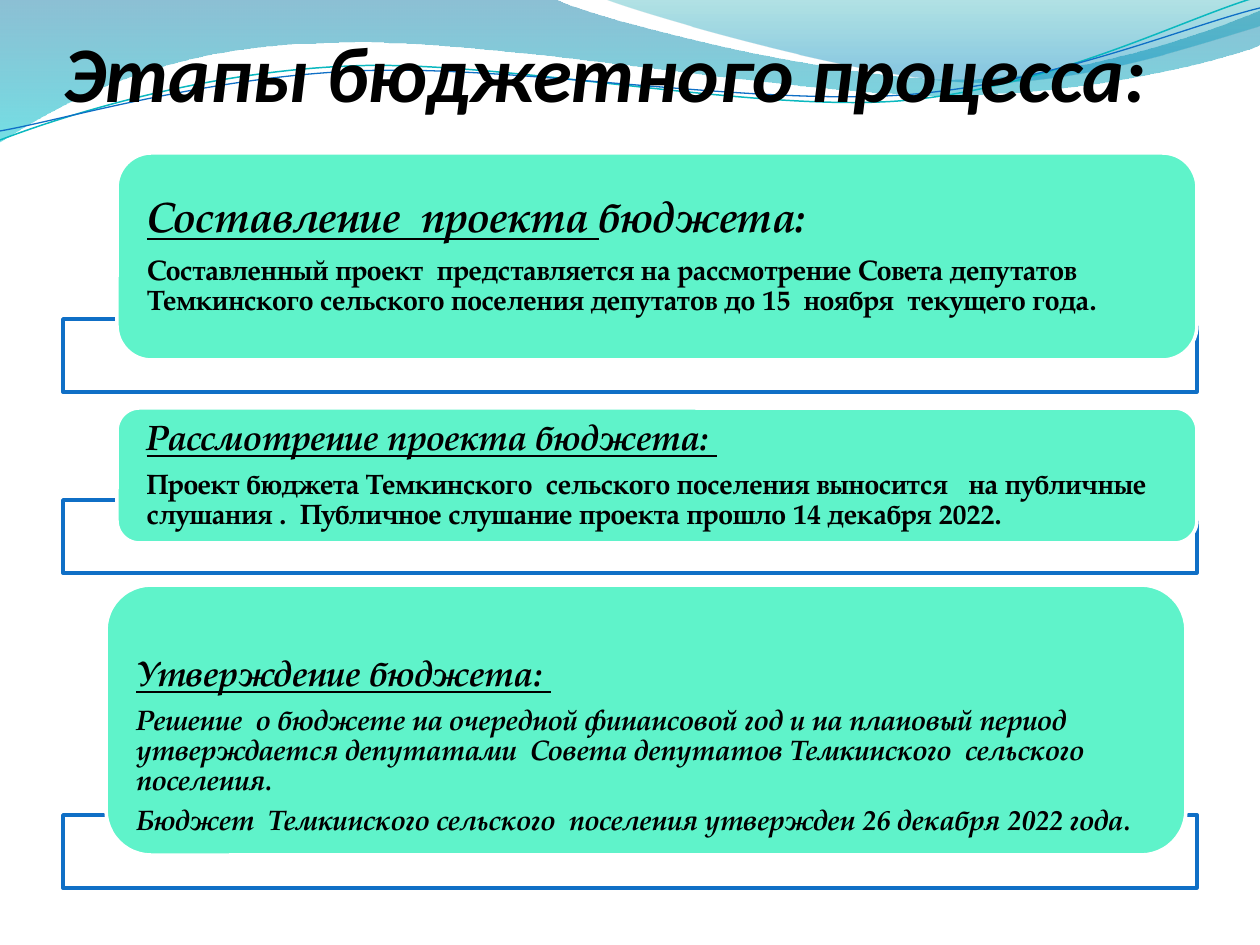
from lxml import etree
from pptx import Presentation
from pptx.dml.color import RGBColor
from pptx.enum.shapes import MSO_SHAPE
from pptx.enum.text import MSO_ANCHOR, MSO_AUTO_SIZE, PP_ALIGN
from pptx.oxml.ns import qn
from pptx.util import Emu, Pt

RECT, ROUND = MSO_SHAPE.RECTANGLE, MSO_SHAPE.ROUNDED_RECTANGLE
MIDDLE, BOTTOM = MSO_ANCHOR.MIDDLE, MSO_ANCHOR.BOTTOM
LEFT, FIXED = PP_ALIGN.LEFT, MSO_AUTO_SIZE.NONE
PX = 914400 / 126

THEME = {
    "ink": RGBColor.from_string("000000"),
    "mint": RGBColor.from_string("5FF3CA"),
    "white": RGBColor.from_string("FFFFFF"),
    "blue": RGBColor.from_string("0F6FC6"),
    "teal": RGBColor.from_string("0AB8BF"),
    "title": 45, "big": 24, "head": 20, "body": 16,
    "title_font": "Calibri", "font": "TeX Gyre Pagella",
}


def px(*nums):
    return [Emu(round(n * PX)) for n in nums]


def fade(shape, *parts):
    """Set the opacity, in percent, of each fill colour in turn."""
    tags = shape._element.spPr.iter(qn("a:srgbClr"))
    for tag, part in zip(tags, parts):
        etree.SubElement(tag, qn("a:alpha")).set("val", str(part * 1000))


deck = Presentation()
deck.slide_width, deck.slide_height = px(1260, 945)
slide = deck.slides.add_slide(deck.slide_layouts[5])
shapes = slide.shapes

# Waves: each step is one point (a line) or three points (a Bezier curve)
waves = [
    {"path": [[(0, 0)], [(554, -1)],
              [(600, 21), (837, 79), (955, 79)],
              [(1075, 79), (1207, 33), (1260, 11)], [(1261, 45)],
              [(1239, 55), (1096, 96), (940, 95)],
              [(784, 95), (481, 35), (324, 43)],
              [(163, 45), (58, 105), (-1, 142)]],
     "stops": [(0, "0074A1"), (1, "00C6CF")], "fade": (45, 55)},
    {"path": [[(604, -1)],
              [(641, 14), (859, 78), (969, 82)],
              [(1079, 87), (1211, 40), (1260, 26)], [(1260, 0)]],
     "stops": [(0, "00A1A9"), (0.8, "008BBF")], "fade": (30, 45)},
    {"path": [[(0, 140)],
              [(60, 117), (199, 72), (349, 66)],
              [(498, 59), (747, 112), (898, 101)],
              [(1049, 89), (1182, 19), (1257, -3)]],
     "line": "teal", "width": 0.85},
    {"path": [[(0, 131)],
              [(59, 121), (207, 77), (357, 71)],
              [(508, 64), (752, 106), (903, 95)],
              [(1053, 84), (1186, 26), (1260, 8)]],
     "line": "blue", "width": 0.75},
]
for wave in waves:
    steps = wave["path"]
    ends = [px(*step[-1]) for step in steps]
    pen = shapes.build_freeform(*ends[0])
    pen.add_line_segments(ends[1:], close="stops" in wave)
    shape = pen.convert_to_shape()
    shape.shadow.inherit = False
    # Bend the straight segments that have control points
    parts = list(shape._element.spPr.iter(qn("a:lnTo")))
    for part, step in zip(parts, steps[1:]):
        if len(step) == 3:
            part.tag = qn("a:cubicBezTo")
            for i, dot in enumerate(step[:2]):
                x, y = px(*dot)
                node = etree.Element(qn("a:pt"))
                node.set("x", str(x - shape.left))
                node.set("y", str(y - shape.top))
                part.insert(i, node)
    if "stops" in wave:
        shape.fill.gradient()
        shape.fill.gradient_angle = 270
        for stop, (pos, hue) in zip(shape.fill.gradient_stops, wave["stops"]):
            stop.position = pos
            stop.color.rgb = RGBColor.from_string(hue)
        fade(shape, *wave["fade"])
        shape.line.fill.background()
    else:
        shape.fill.background()
        shape.line.color.rgb = THEME[wave["line"]]
        shape.line.width = Pt(wave["width"])

# Title, lifted above the waves
title = shapes.title
shapes._spTree.append(title._element)
title.left, title.top, title.width, title.height = px(63, 20, 1134, 98)
frame = title.text_frame
frame.text = "Этапы бюджетного процесса:"
frame.auto_size, frame.vertical_anchor = FIXED, BOTTOM
frame.margin_left, frame.margin_top, frame.margin_right, frame.margin_bottom = px(0, 6, 0, 0)
frame.paragraphs[0].alignment = LEFT
font = frame.paragraphs[0].runs[0].font
for key, val in {"name": THEME["title_font"], "size": Pt(THEME["title"]),
                 "bold": True, "italic": True}.items():
    setattr(font, key, val)
font.color.rgb = THEME["ink"]

# Stages: frame top, card left, top and height, space above the text,
# then paragraphs of (size, runs of (text, italic, underline))
stages = [
    (319, 117, 153, 207, 0, [
        ("big", [("Составление  проекта ", True, True), ("бюджета:", True, False)]),
        ("body", [("Составленный проект  представляется на рассмотрение Совета депутатов  "
                   "Темкинского сельского поселения депутатов до 15  ноября  текущего года.",
                   False, False)])]),
    (500, 117, 408, 135, 0, [
        ("head", [("Рассмотрение проекта бюджета: ", True, True)]),
        ("body", [("Проект бюджета Темкинского  сельского поселения выносится   на публичные "
                   "слушания .  Публичное слушание проекта прошло 14 декабря 2022.",
                   False, False)])]),
    (815, 106, 585, 270, 53, [
        ("head", [("Утверждение бюджета: ", True, True)]),
        ("body", [("Решение  о бюджете на очередной финансовой год и на плановый период "
                   "утверждается депутатами  Совета депутатов Темкинского  сельского поселения.",
                   True, False)]),
        ("body", [("Бюджет  Темкинского сельского  поселения утвержден 26 декабря 2022 года.",
                   True, False)])]),
]
for base, left, top, high, gap, paras in stages:
    back = shapes.add_shape(RECT, *px(63, base, 1134, 73))
    card = shapes.add_shape(ROUND, *px(left, top, 1080, high))
    for shape, fill, line in ((back, "white", "blue"), (card, "mint", "white")):
        shape.shadow.inherit = False
        shape.fill.solid()
        shape.fill.fore_color.rgb = THEME[fill]
        shape.line.color.rgb = THEME[line]
        shape.line.width = Pt(2)
    fade(back, 90)

    # Rounded corners already push the text in by about 4.9 % of the height
    side = 30 - round(high * 0.049)
    frame = card.text_frame
    frame.word_wrap, frame.vertical_anchor = True, MIDDLE
    frame.margin_left, frame.margin_top, frame.margin_right, frame.margin_bottom = px(
        side, gap, side, 0)
    for i, (size, runs) in enumerate(paras):
        para = frame.add_paragraph() if i else frame.paragraphs[0]
        para.alignment, para.line_spacing = LEFT, 0.9
        if i < len(paras) - 1:
            para.space_after = Pt(round(THEME[size] * 0.35, 1))
        for text, slant, under in runs:
            run = para.add_run()
            run.text = text
            for key, val in {"name": THEME["font"], "size": Pt(THEME[size]), "bold": True,
                             "italic": slant, "underline": under}.items():
                setattr(run.font, key, val)
            run.font.color.rgb = THEME["ink"]

deck.save("out.pptx")
